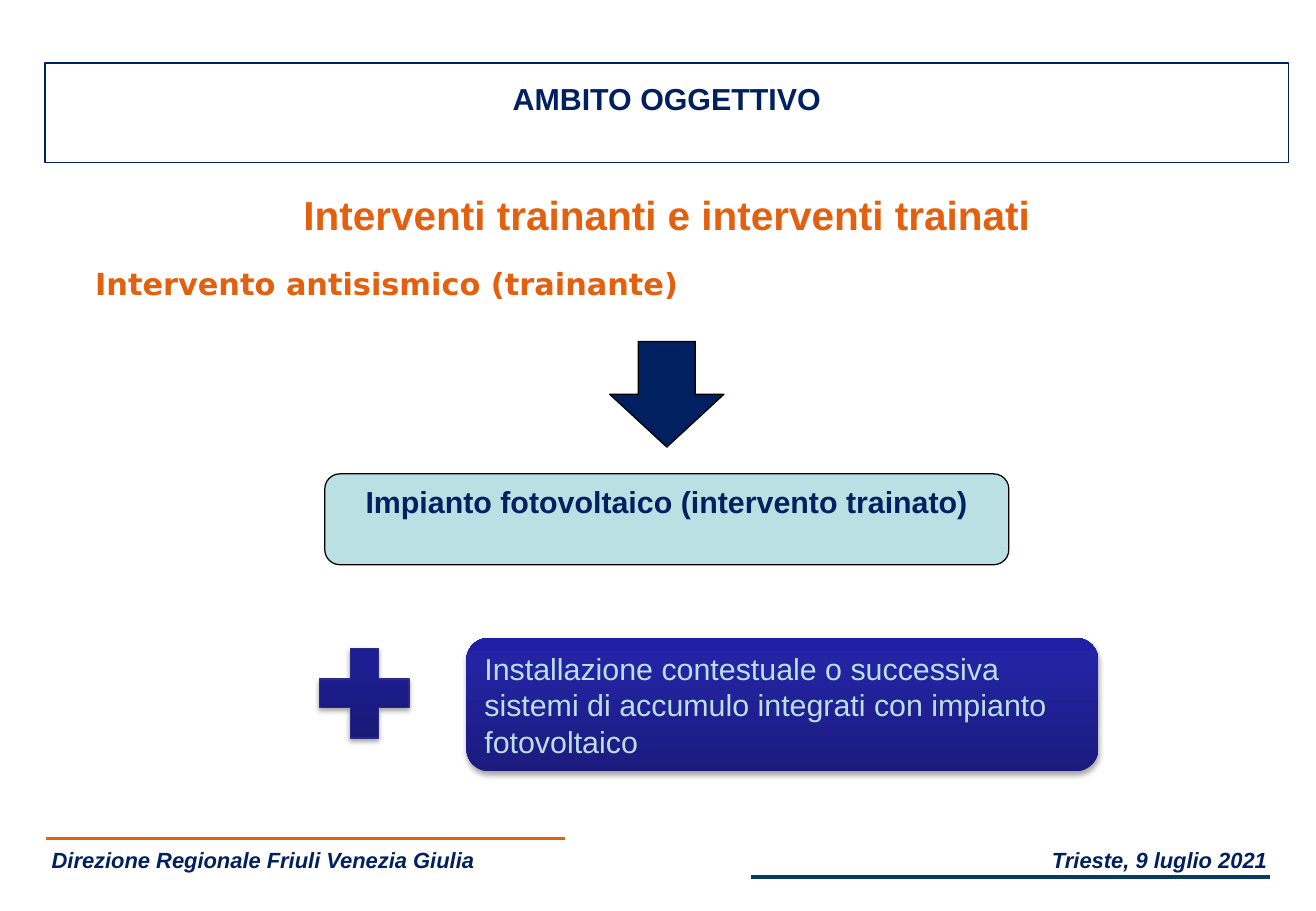
import pptx
import pptx.util
import pptx.dml.color
from lxml import etree
from pptx.enum.shapes import MSO_CONNECTOR, MSO_SHAPE
from pptx.enum.text import MSO_ANCHOR, PP_ALIGN
from pptx.oxml.ns import qn

Cm, Pt = pptx.util.Cm, pptx.util.Pt

# Content: places in cm as left, top, width, height
NAVY, ORANGE, TEAL = "002060", "E3600F", "BBE0E3"
AXIS = 13.94  # vertical centre line of the main column
FOOTER_RULES = [(0.97, 17.53, ORANGE), (15.7, 18.34, "073C62")]
RULE_LENGTH = 10.85
FOOTER_FORMAT = dict(size=13, color=NAVY, bold=True, italic=True)
TEXTS = [
    ("Trieste, 9 luglio 2021", (17.65, 17.58, 9.07, 0.79),
     dict(FOOTER_FORMAT, align=PP_ALIGN.RIGHT)),
    ("Direzione Regionale Friuli Venezia Giulia", (0.84, 17.58, 10.34, 0.79),
     FOOTER_FORMAT),
    ("Interventi trainanti e interventi trainati", (AXIS - 11.52, 3.84, 23.04, 1.7),
     dict(size=24, color=ORANGE, bold=True, align=PP_ALIGN.CENTER)),
    ("Intervento antisismico (trainante)", (1.75, 5.41, 25.2, 10.85),
     dict(font="DejaVu Sans", color=ORANGE, bold=True, align=PP_ALIGN.JUSTIFY)),
]
HEADING = "AMBITO OGGETTIVO"
PHOTOVOLTAIC = "Impianto fotovoltaico (intervento trainato)"
STORAGE = ("Installazione contestuale o successiva sistemi di accumulo "
           "integrati con impianto fotovoltaico")
PLUS_GRADIENT = [(0, "171771"), (80, "1E1E93"), (100, "1C1C96")]
STORAGE_GRADIENT = [(0, "1B1B7E"), (80, "2323A3"), (100, "2020A6")]

deck = pptx.Presentation()
deck.slide_width, deck.slide_height = Cm(27.51), Cm(19.05)
slide = deck.slides.add_slide(deck.slide_layouts[6])


def rgb(value):
    return pptx.dml.color.RGBColor.from_string(value)


def write(shape, text, font="Arial", size=18, color=NAVY, bold=False, italic=False,
          align=PP_ALIGN.LEFT, spacing=None, anchor=MSO_ANCHOR.TOP, inset=0.13):
    frame = shape.text_frame
    frame.word_wrap = True
    frame.vertical_anchor = anchor
    frame.margin_top = frame.margin_bottom = Cm(inset)
    frame.margin_left = frame.margin_right = Cm(0.24)
    paragraph = frame.paragraphs[0]
    paragraph.alignment = align
    if spacing:
        paragraph.line_spacing = spacing
    run = paragraph.add_run()
    run.text = text
    run.font.name, run.font.size = font, Pt(size)
    run.font.bold, run.font.italic = bold, italic
    run.font.color.rgb = rgb(color)


def add_figure(kind, place, fill=None, line=None):
    figure = slide.shapes.add_shape(kind, *map(Cm, place))
    figure.shadow.inherit = False
    if fill:
        figure.fill.solid()
        figure.fill.fore_color.rgb = rgb(fill)
    else:
        figure.fill.background()
    if line:
        figure.line.color.rgb = rgb(line)
        figure.line.width = Pt(0.75)
    else:
        figure.line.fill.background()
    return figure


def add_glossy(kind, place, stops, line=None):
    """Shape with an upward gradient and a soft shadow below."""
    figure = add_figure(kind, place, line=line)
    figure.fill.gradient()
    figure.fill.gradient_angle = 90
    properties = figure._element.spPr
    stop_list = properties.find(".//" + qn("a:gsLst"))
    for old in list(stop_list):
        stop_list.remove(old)
    for position, color in stops:
        stop = etree.SubElement(stop_list, qn("a:gs"), pos=str(position * 1000))
        etree.SubElement(stop, qn("a:srgbClr"), val=color)
    shadow = etree.SubElement(
        properties.find(qn("a:effectLst")), qn("a:outerShdw"), blurRad=str(Pt(3.1)),
        dist=str(Pt(1.8)), dir="5400000", rotWithShape="0")
    shade = etree.SubElement(shadow, qn("a:srgbClr"), val="000000")
    etree.SubElement(shade, qn("a:alpha"), val="35000")
    return figure


def centred(width, top, height):
    return AXIS - width / 2, top, width, height


# Footer rules
for left, top, color in FOOTER_RULES:
    rule = slide.shapes.add_connector(
        MSO_CONNECTOR.STRAIGHT, Cm(left), Cm(top), Cm(left + RULE_LENGTH), Cm(top))
    rule.line.color.rgb = rgb(color)
    rule.line.width = Pt(2)
    etree.SubElement(rule._element.spPr, qn("a:effectLst"))

# Footer, title and opening text
for text, place, style in TEXTS:
    write(slide.shapes.add_textbox(*map(Cm, place)), text, **style)

# Heading frame
heading = add_figure(MSO_SHAPE.RECTANGLE, centred(26, 1.32, 2.08), line=NAVY)
write(heading, HEADING, bold=True, align=PP_ALIGN.CENTER, spacing=1.3)

# Arrow down to the photovoltaic system
add_figure(MSO_SHAPE.DOWN_ARROW, centred(2.39, 7.14, 2.21), NAVY, "000000")
photovoltaic = add_figure(
    MSO_SHAPE.ROUNDED_RECTANGLE, centred(14.3, 9.91, 1.9), TEAL, "000000")
write(photovoltaic, PHOTOVOLTAIC, bold=True, align=PP_ALIGN.CENTER, inset=0.11)

# Plus the storage systems
add_glossy(MSO_SHAPE.MATH_PLUS, (6.35, 13.23, 2.54, 2.54), PLUS_GRADIENT, "2A2A89")
storage = add_glossy(
    MSO_SHAPE.ROUNDED_RECTANGLE, (9.75, 13.34, 13.21, 2.79), STORAGE_GRADIENT)
write(storage, STORAGE, color=TEAL, anchor=MSO_ANCHOR.MIDDLE, inset=0.11)

deck.save("out.pptx")
